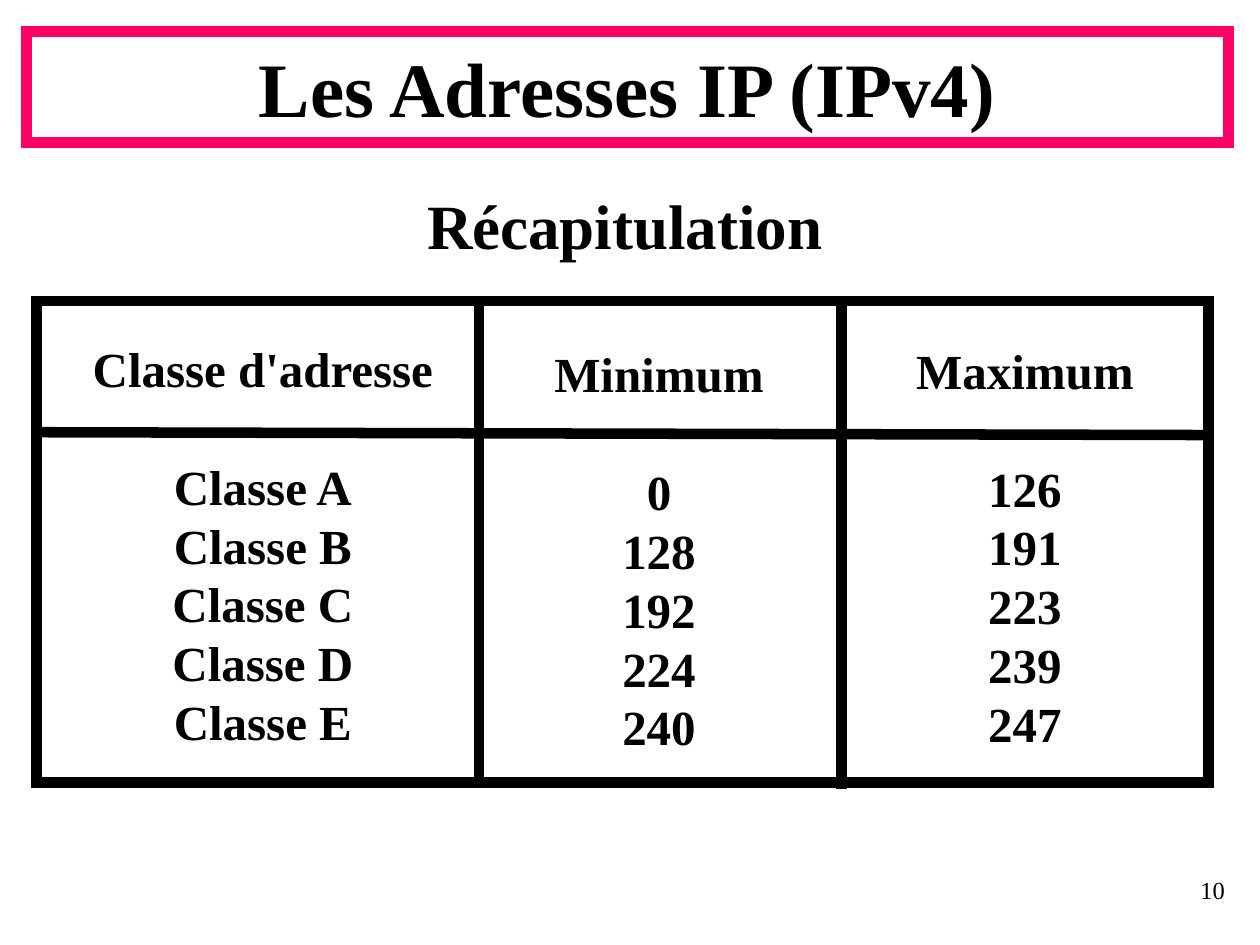
from dataclasses import dataclass

from lxml import etree
from pptx import Presentation, util as u
from pptx.dml.color import RGBColor
from pptx.enum import shapes as s, text as t
from pptx.oxml.ns import qn

Pt = u.Pt
FONT = "Times New Roman"
BLACK, INK, WHITE, PINK = "000000", "010000", "FFFFFF", "FF0066"
RULE = 6
HEADER_GAP = 33.6


@dataclass
class Label:
    lines: tuple[str, ...]
    left: float
    top: float
    width: float
    height: float
    size: float
    bold: bool = True
    color: str = BLACK
    align: t.PP_ALIGN = t.PP_ALIGN.CENTER
    anchor: t.MSO_ANCHOR = t.MSO_ANCHOR.TOP
    wrap: bool = True
    spacing: float = 1.0
    header_gap: float = 0


@dataclass
class Rule:
    x1: float
    y1: float
    x2: float
    y2: float


TITLE = Label(("Les Adresses IP (IPv4)",), 15.1, 18, 686.9, 63.4, 44,
              color=INK, anchor=t.MSO_ANCHOR.MIDDLE)
SUBTITLE = Label(("Récapitulation",), 18, 108, 678.2, 50.4, 36,
                 color=INK, spacing=0.9)
PAGE_NUMBER = Label(("10",), 557.3, 491, 149.8, 35.3, 14, bold=False,
                    align=t.PP_ALIGN.RIGHT, anchor=t.MSO_ANCHOR.MIDDLE, wrap=False)


def address_column(lines: tuple[str, ...], left: float, top: float, width: float) -> Label:
    return Label(lines, left, top, width, 242.6, 28, wrap=False, header_gap=HEADER_GAP)


COLUMNS = (
    address_column(("Classe d'adresse", "Classe A", "Classe B", "Classe C",
                    "Classe D", "Classe E"), 45.4, 190, 209.5),
    address_column(("Minimum", "0", "128", "192", "224", "240"), 309.3, 193, 134.6),
    address_column(("Maximum", "126", "191", "223", "239", "247"), 516.2, 191, 139),
)
RULES = (
    Rule(690.5, 248.6, 22.3, 247),
    Rule(273.6, 173.5, 273.6, 445.7),
    Rule(481, 169.9, 481, 450.7),
)


def rgb(color: str) -> RGBColor:
    return RGBColor.from_string(color)


def set_all(target, values: dict) -> None:
    for key, value in values.items():
        setattr(target, key, value)


def set_outline(line, color: str) -> None:
    line.color.rgb = rgb(color)
    line.width = Pt(RULE)
    etree.SubElement(line._get_or_add_ln(), qn("a:miter"), lim="800000")


def paint(shape, outline: str) -> None:
    shape.fill.solid()
    shape.fill.fore_color.rgb = rgb(WHITE)
    set_outline(shape.line, outline)


def place(shape, label: Label) -> None:
    set_all(shape, {"left": Pt(label.left), "top": Pt(label.top),
                    "width": Pt(label.width), "height": Pt(label.height)})
    frame = shape.text_frame
    set_all(frame, {
        "word_wrap": label.wrap, "auto_size": t.MSO_AUTO_SIZE.NONE,
        "vertical_anchor": label.anchor,
        "margin_left": Pt(7.2), "margin_right": Pt(7.2),
        "margin_top": Pt(3.6), "margin_bottom": Pt(3.6)})
    for index, words in enumerate(label.lines):
        paragraph = frame.add_paragraph() if index else frame.paragraphs[0]
        set_all(paragraph, {
            "alignment": label.align, "line_spacing": label.spacing,
            "space_before": Pt(label.header_gap if index == 1 else 0)})
        run = paragraph.add_run()
        run.text = words
        set_all(run.font, {"name": FONT, "size": Pt(label.size), "bold": label.bold})
        run.font.color.rgb = rgb(label.color)


def draw_label(slide, label: Label) -> None:
    place(slide.shapes.add_textbox(0, 0, 0, 0), label)


def draw_frame(slide, left: float, top: float, width: float, height: float) -> None:
    frame = slide.shapes.add_shape(
        s.MSO_SHAPE.RECTANGLE, Pt(left), Pt(top), Pt(width), Pt(height))
    frame.shadow.inherit = False
    paint(frame, BLACK)


def draw_rule(slide, rule: Rule) -> None:
    connector = slide.shapes.add_connector(
        s.MSO_CONNECTOR.STRAIGHT, Pt(rule.x1), Pt(rule.y1), Pt(rule.x2), Pt(rule.y2))
    set_outline(connector.line, BLACK)
    etree.SubElement(connector._element.spPr, qn("a:effectLst"))


def main() -> None:
    deck = Presentation()
    set_all(deck, {"slide_width": Pt(720), "slide_height": Pt(540)})
    slide = deck.slides.add_slide(deck.slide_layouts[5])
    place(slide.shapes.title, TITLE)
    paint(slide.shapes.title, PINK)
    draw_label(slide, PAGE_NUMBER)
    draw_label(slide, SUBTITLE)
    draw_frame(slide, 20.9, 172.1, 669.6, 275)
    for column in COLUMNS:
        draw_label(slide, column)
    for rule in RULES:
        draw_rule(slide, rule)
    deck.save("out.pptx")


if __name__ == "__main__":
    main()
